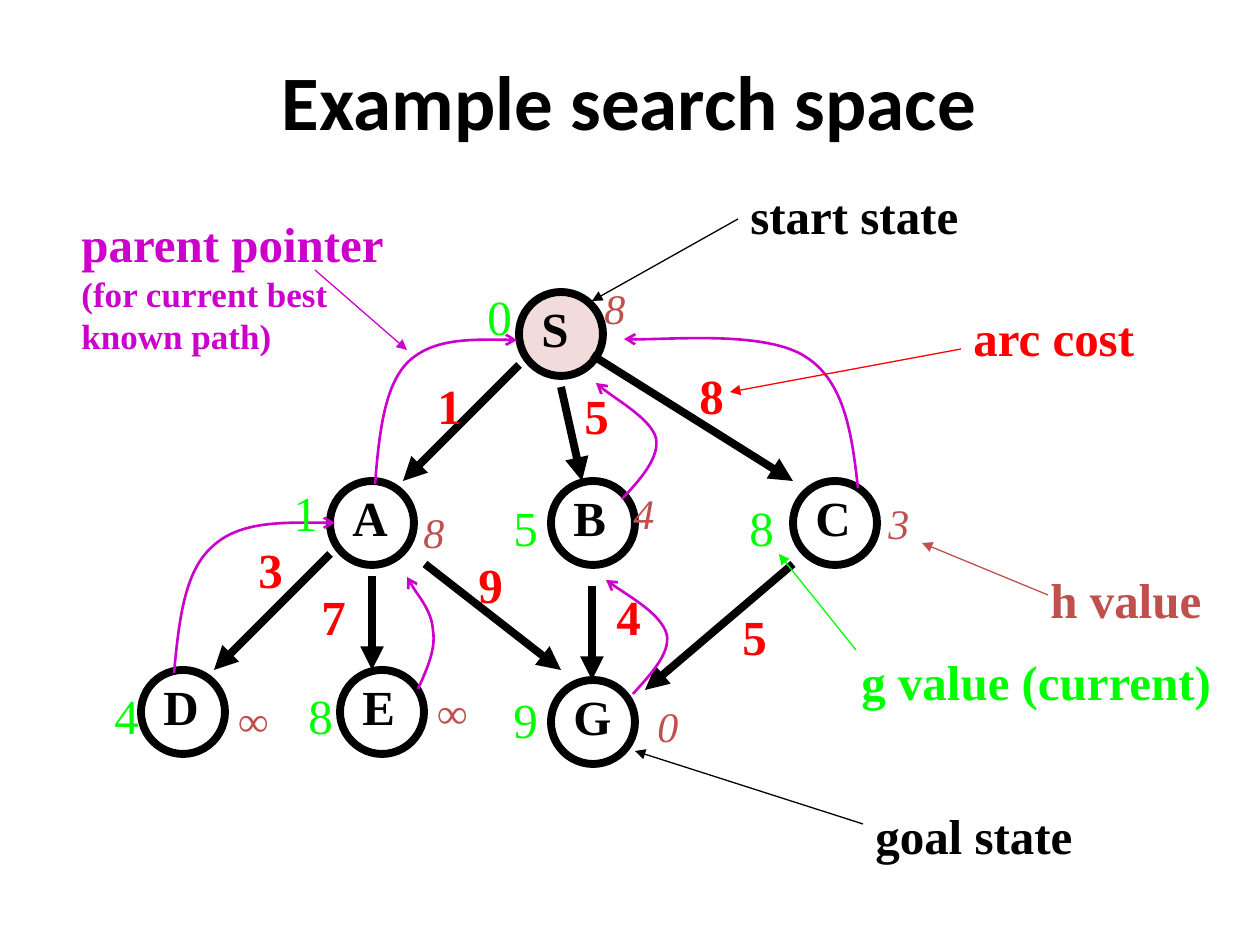
from lxml import etree
from pptx import Presentation
from pptx.dml.color import RGBColor
from pptx.enum.shapes import MSO_CONNECTOR as CONN, MSO_SHAPE as SHAPE
from pptx.enum.text import MSO_ANCHOR as ANCHOR, MSO_AUTO_SIZE as AUTO, PP_ALIGN as ALIGN
from pptx.oxml.ns import qn
from pptx.util import Emu, Pt

PX_PER_INCH = 126
COLORS = {
    "ink": "000000", "start": "F2DCDB", "cost": "FF0000",
    "h": "C0504D", "g": "00FF00", "parent": "CC00CC",
}


def emu(px):
    return Emu(round(px * 914400 / PX_PER_INCH))


class GraphSlide:
    title_font = "Calibri"
    font = "Times New Roman"
    node_size = 84

    def __init__(self, prs):
        self.slide = prs.slides.add_slide(prs.slide_layouts[5])
        self.shapes = self.slide.shapes

    def color(self, name):
        return RGBColor.from_string(COLORS[name])

    def style_run(self, r, color, size, bold=False, italic=False, font=None):
        f = r.font
        f.name, f.size, f.bold, f.italic = font or self.font, Pt(size), bold, italic
        f.color.rgb = self.color(color)

    def style_line(self, sp, color, width, head=None):
        sp.line.color.rgb = self.color(color)
        sp.line.width = Pt(width)
        if head:
            ln = sp.line._get_or_add_ln()
            etree.SubElement(ln, qn("a:tailEnd"), type=head)

    def title(self, text, x, y, w, h):
        sp = self.shapes.title
        sp.left, sp.top, sp.width, sp.height = map(emu, (x, y, w, h))
        tf = sp.text_frame
        tf.text = text
        tf.vertical_anchor = ANCHOR.MIDDLE
        p = tf.paragraphs[0]
        p.alignment = ALIGN.CENTER
        self.style_run(p.runs[0], "ink", 44, bold=True, font=self.title_font)

    def text(self, text, x, y, w, h=72, color="ink", sizes=(28,), bold=True, italic=False):
        """Lines of text take their sizes in turn; the last size carries on."""
        tf = self.shapes.add_textbox(*map(emu, (x, y, w, h))).text_frame
        tf.word_wrap = False
        tf.auto_size = AUTO.SHAPE_TO_FIT_TEXT
        p = tf.paragraphs[0]
        p.text = text
        for i, r in enumerate(p.runs):
            self.style_run(r, color, sizes[min(i, len(sizes) - 1)], bold, italic)

    def node(self, name, x, y, label_w, fill=None):
        sp = self.shapes.add_shape(SHAPE.OVAL, *map(emu, (x, y, self.node_size, self.node_size)))
        sp.shadow.inherit = False
        if fill:
            sp.fill.solid()
            sp.fill.fore_color.rgb = self.color(fill)
        else:
            sp.fill.background()
        self.style_line(sp, "ink", 4.5)
        self.text(name, x + 10, y, label_w)

    def arrow(self, x1, y1, x2, y2, color="ink", width=0.75):
        sp = self.shapes.add_connector(CONN.STRAIGHT, *map(emu, (x1, y1, x2, y2)))
        self.style_line(sp, color, width, "triangle")
        etree.SubElement(sp._element.spPr, qn("a:effectLst"))

    def curve(self, start, *points):
        """Cubic curve: each three points are two controls and an end."""
        fb = self.shapes.build_freeform(*map(emu, start))
        fb.add_line_segments([tuple(map(emu, pt)) for pt in points], close=False)
        sp = fb.convert_to_shape()
        sp.shadow.inherit = False
        sp.fill.background()
        self.style_line(sp, "parent", 1.5, "arrow")
        segments = list(sp._element.iter(qn("a:lnTo")))
        outline = segments[0].getparent()
        for i in range(0, len(segments), 3):
            bezier = etree.SubElement(outline, qn("a:cubicBezTo"))
            for seg in segments[i:i + 3]:
                bezier.append(seg[0])
                outline.remove(seg)


def main():
    prs = Presentation()
    prs.slide_width, prs.slide_height = emu(1260), emu(945)
    s = GraphSlide(prs)
    s.title("Example search space", 94, 21, 1071, 158)

    # States: name, left, top, label width, fill
    for state in [
        ("S", 519, 292, 53, "start"), ("C", 793, 481, 60), ("B", 551, 481, 58),
        ("A", 330, 481, 60), ("D", 141, 670, 60), ("G", 551, 680, 63),
        ("E", 340, 670, 58),
    ]:
        s.node(*state)

    # Arcs and their costs
    for ends, cost, x, y in [
        ((519, 365, 403, 481), "1", 425, 369),
        ((561, 387, 582, 481), "5", 572, 379),
        ((592, 355, 793, 481), "8", 687, 359),
        ((425, 564, 561, 670), "9", 466, 548),
        ((592, 586, 592, 680), "4", 604, 580),
        ((793, 564, 645, 690), "5", 730, 600),
        ((330, 554, 214, 670), "3", 246, 533),
        ((372, 576, 372, 670), "7", 309, 580),
    ]:
        s.arrow(*ends, width=4.5)
        s.text(cost, x, y, 50, color="cost")

    # h values
    for value, x, y in [
        ("8", 592, 276), ("8", 411, 500), ("4", 621, 481), ("3", 876, 491),
        ("∞", 425, 680), ("∞", 226, 688), ("0", 645, 694),
    ]:
        s.text(value, x, y, 55 if value == "∞" else 47, 63, "h", (24,), False, True)

    # Parent pointers
    for points in [
        [(375, 484), (379, 435), (384, 387), (407, 363), (431, 339), (474, 339), (517, 340)],
        [(174, 673), (179, 622), (184, 572), (212, 547), (238, 522), (286, 522), (335, 523)],
        [(418, 689), (427, 669), (436, 649), (433, 631), (432, 612), (411, 586), (407, 577)],
        [(633, 694), (651, 674), (670, 654), (667, 635), (662, 615), (616, 588), (606, 580)],
        [(622, 499), (641, 479), (660, 457), (656, 438), (651, 420), (606, 393), (596, 383)],
        [(858, 488), (852, 435), (845, 382), (806, 357), (767, 331), (655, 341), (624, 339)],
    ]:
        s.curve(*points)

    # g values
    for value, x, y in [
        ("0", 475, 280), ("1", 281, 476), ("4", 102, 679), ("8", 296, 679),
        ("9", 501, 683), ("8", 737, 491), ("5", 501, 491),
    ]:
        s.text(value, x, y, 50, color="g", bold=False)

    # Legend labels with their arrows
    for label, x, y, w, color, ends in [
        ("start state", 738, 179, 236, "ink", (738, 219, 592, 301)),
        ("goal state", 863, 799, 224, "ink", (863, 824, 635, 751)),
        ("arc cost", 961, 301, 188, "cost", (961, 349, 730, 392)),
        ("h value", 1038, 563, 178, "h", (1048, 595, 922, 543)),
        ("g value (current)", 849, 645, 379, "g", (856, 650, 779, 554)),
    ]:
        s.text(label, x, y, w, color=color)
        s.arrow(*ends, color)
    s.text("parent pointer\v(for current best\vknown path)", 69, 207, 331, 158,
           "parent", (28, 20))
    s.arrow(315, 270, 407, 350, "parent")

    prs.save("out.pptx")


if __name__ == "__main__":
    main()
